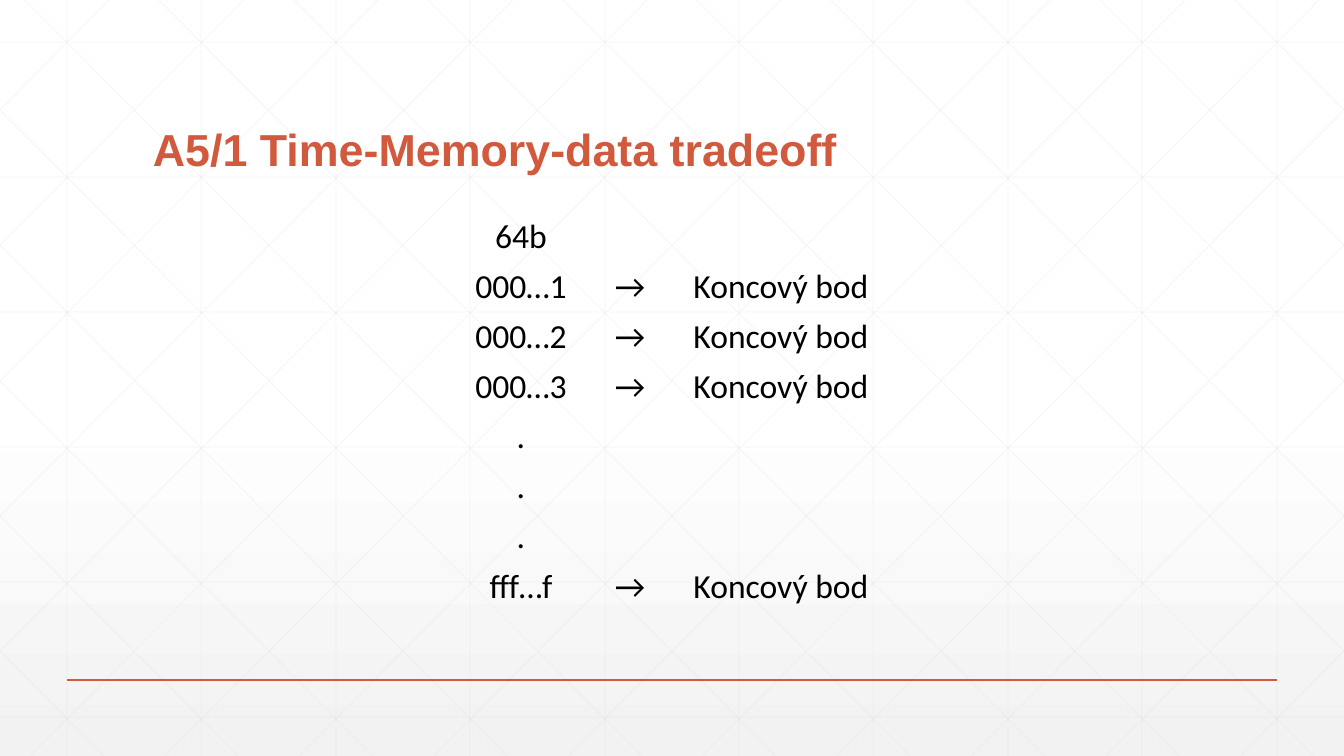
"""Build the slide on the A5/1 time-memory-data tradeoff."""
import pptx
import pptx.util
import pptx.dml.color
import pptx.enum.shapes
import pptx.enum.text
import pptx.oxml
import pptx.oxml.ns
from dataclasses import dataclass

TITLE = "A5/1 Time-Memory-data tradeoff"
END = ("→", "Koncový bod")
ROWS = [
    ("64b",),
    ("000…1", *END),
    ("000…2", *END),
    ("000…3", *END),
    (".",),
    (".",),
    (".",),
    ("fff…f", *END),
]


@dataclass(frozen=True)
class Theme:
    """Colours, fonts and type sizes."""
    accent: str = "D15A3E"
    ink: str = "000000"
    mesh: str = "D9D9D9"
    stops: tuple = ((0, "FFFFFF", 100), (53, "FFFFFF", 100), (100, "F2F2F2", 65))
    head: str = "Arial"
    body: str = "Calibri"
    large: int = 32
    small: int = 24
    clear: int = 25


THEME = Theme()
WIDE, HIGH = 1344, 756
STEP, DROP, RUN = 134.4, 135, 751
EDGE, TOP, LEAN = 67, 42, 25
COLS = (154, 64, 238)
ROW = 50
PLAIN = "{2D5ABB26-0587-4C30-8999-92F81FD0307C}"


def px(size):
    return pptx.util.Emu(round(size * 914400 / 100.8))


def tint(code):
    return pptx.dml.color.RGBColor.from_string(code)


def tag(text):
    space = pptx.oxml.ns.nsdecls("a")
    return pptx.oxml.parse_xml(text.replace(" NS", " " + space, 1))


def paint(slide):
    fill = slide.background.fill
    fill.gradient()
    fill.gradient_angle = 270
    stops = slide.element.find(".//" + pptx.oxml.ns.qn("a:gsLst"))
    stops.clear()
    for spot, code, alpha in THEME.stops:
        stops.append(tag(
            f'<a:gs NS pos="{spot * 1000}"><a:srgbClr val="{code}">'
            f'<a:alpha val="{alpha * 1000}"/></a:srgbClr></a:gs>'))


def rule(slide, ends, code, width, alpha=100):
    kind = pptx.enum.shapes.MSO_CONNECTOR.STRAIGHT
    line = slide.shapes.add_connector(kind, *(px(round(end)) for end in ends))
    line.line.color.rgb = tint(code)
    line.line.width = pptx.util.Pt(width)
    props = line.element.spPr
    props.append(tag("<a:effectLst NS/>"))
    if alpha < 100:
        color = props.find(".//" + pptx.oxml.ns.qn("a:srgbClr"))
        color.append(tag(f'<a:alpha NS val="{alpha * 1000}"/>'))


def mesh():
    for col in range(10):
        x = EDGE + col * STEP
        yield x, 0, x, HIGH
    for row in range(6):
        y = TOP + row * DROP
        yield 0, y, WIDE, y
    for col in range(-5, 10):
        start = LEAN + col * STEP
        left, right = max(0, start), min(WIDE, start + RUN)
        high, low = ((x - start) * HIGH / RUN for x in (left, right))
        yield left, high, right, low
        yield WIDE - left, high, WIDE - right, low


def style(para, face, size, code, bold=False):
    para.font.name = face
    para.font.size = pptx.util.Pt(size)
    para.font.color.rgb = tint(code)
    para.font.bold = bold


def title(slide):
    frame = slide.shapes.add_textbox(*map(px, (143, 55, 1058, 126))).text_frame
    frame.word_wrap = True
    frame.vertical_anchor = pptx.enum.text.MSO_ANCHOR.BOTTOM
    para = frame.paragraphs[0]
    para.text = TITLE
    para.line_spacing = 0.9
    style(para, THEME.head, THEME.large, THEME.accent, True)


def grid(slide):
    area = map(px, (444, 212, sum(COLS), ROW * len(ROWS)))
    table = slide.shapes.add_table(len(ROWS), len(COLS), *area).table
    table.first_row = table.horz_banding = False
    name = pptx.oxml.ns.qn("a:tableStyleId")
    table._tbl.tblPr.find(name).text = PLAIN
    for col, width in zip(table.columns, COLS):
        col.width = px(width)
    for row, words in zip(table.rows, ROWS):
        row.height = px(ROW)
        for cell in row.cells:
            cell.fill.background()
            cell.margin_left = cell.margin_right = cell.margin_top = px(1)
            cell.margin_bottom = 0
            cell.vertical_anchor = pptx.enum.text.MSO_ANCHOR.MIDDLE
        for cell, word in zip(row.cells, words):
            para = cell.text_frame.paragraphs[0]
            para.text = word
            para.alignment = pptx.enum.text.PP_ALIGN.CENTER
            style(para, THEME.body, THEME.small, THEME.ink)


def main():
    deck = pptx.Presentation()
    deck.slide_width, deck.slide_height = px(WIDE), px(HIGH)
    slide = deck.slides.add_slide(deck.slide_layouts[6])
    paint(slide)
    for ends in mesh():
        rule(slide, ends, THEME.mesh, 0.5, THEME.clear)
    rule(slide, (EDGE, 680, WIDE - EDGE, 680), THEME.accent, 1)
    title(slide)
    grid(slide)
    deck.save("out.pptx")


if __name__ == "__main__":
    main()
